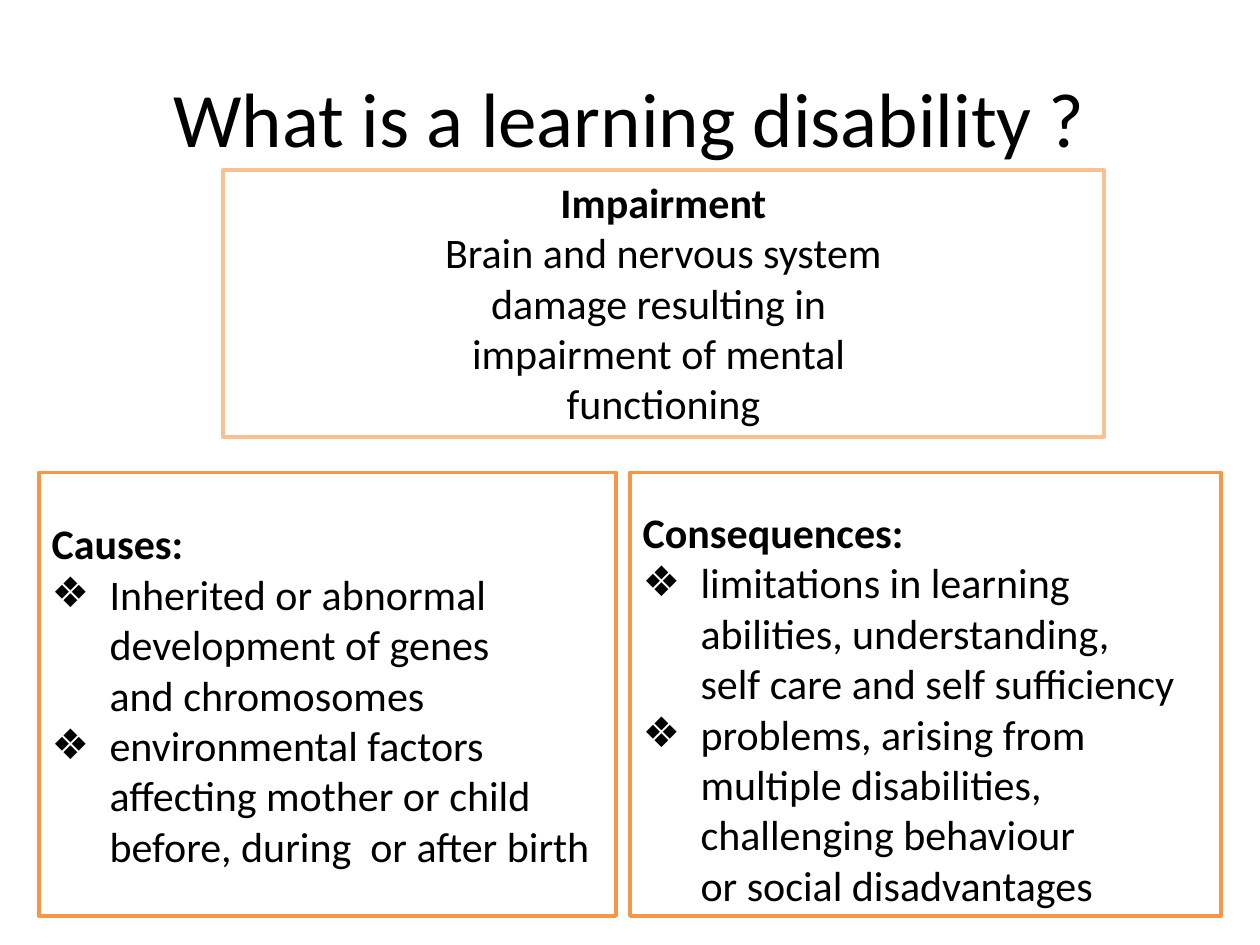
import dataclasses

import lxml.etree
import pptx
import pptx.dml.color
import pptx.enum.shapes
import pptx.enum.text
import pptx.oxml.ns
import pptx.util

ANCHOR = pptx.enum.text.MSO_ANCHOR
ALIGN = pptx.enum.text.PP_ALIGN
SLIDE_W, SLIDE_H = 10, 7.5


@dataclasses.dataclass(frozen=True)
class Theme:
    font: str = "Calibri"
    text: str = "000000"
    paper: str = "FFFFFF"
    soft_line: str = "FAC090"
    strong_line: str = "F79646"
    title_size: int = 44
    body_size: int = 24
    line_width: int = 2
    bullet: str = "❖"
    hang: float = 0.46


THEME = Theme()

# Boxes are left, top, width and height in inches.
MARGIN, LIST_TOP, LIST_H = 0.31, 3.75, 3.52
TITLE_BOX = (0.5, 0.3, SLIDE_W - 2 * 0.5, 1.25)
IMPAIRMENT_BOX = (1.77, 1.35, 6.99, 2.12)
CAUSES_BOX = (MARGIN, LIST_TOP, 4.58, LIST_H)
CONSEQUENCES_BOX = (SLIDE_W / 2, LIST_TOP, SLIDE_W / 2 - MARGIN, LIST_H)

IMPAIRMENT = [
    "Impairment",
    "Brain and nervous system",
    "damage resulting in ",
    "impairment of mental ",
    "functioning",
]
CAUSES = [
    "Causes:",
    "Inherited or abnormal\vdevelopment of genes\vand chromosomes",
    "environmental factors\vaffecting mother or child\v"
    "before, during  or after birth",
]
CONSEQUENCES = [
    "Consequences:",
    "limitations in learning\vabilities, understanding,\v"
    "self care and self sufficiency",
    "problems, arising from\vmultiple disabilities,\v"
    "challenging behaviour\vor social disadvantages",
]


def rgb(value):
    return pptx.dml.color.RGBColor.from_string(value)


def place(s, box):
    s.left, s.top, s.width, s.height = map(pptx.util.Inches, box)


def style_frame(s, line_color):
    s.fill.solid()
    s.fill.fore_color.rgb = rgb(THEME.paper)
    s.line.color.rgb = rgb(line_color)
    s.line.width = pptx.util.Pt(THEME.line_width)


def style_runs(p, size, bold=False):
    for r in p.runs:
        r.font.name = THEME.font
        r.font.size = pptx.util.Pt(size)
        r.font.bold = bold
        r.font.color.rgb = rgb(THEME.text)


def set_bullet(p, char=None):
    """Give the paragraph a hanging bullet, or none."""
    hang = pptx.util.Inches(THEME.hang) if char else 0
    pPr = p._p.get_or_add_pPr()
    pPr.set("marL", str(hang))
    pPr.set("indent", str(-hang))
    tag = "a:buChar" if char else "a:buNone"
    bullet = lxml.etree.SubElement(pPr, pptx.oxml.ns.qn(tag))
    if char:
        bullet.set("char", char)


def write_lines(tf, lines, align):
    """Write a bold heading followed by plain lines."""
    tf.word_wrap = True
    tf.auto_size = pptx.enum.text.MSO_AUTO_SIZE.NONE
    tf.text = "\n".join(lines)
    for i, p in enumerate(tf.paragraphs):
        p.alignment = align
        p.space_before = pptx.util.Pt(0)
        style_runs(p, THEME.body_size, bold=i == 0)


def fill_title(s, box, text):
    place(s, box)
    tf = s.text_frame
    tf.text = text
    tf.vertical_anchor = ANCHOR.MIDDLE
    tf.paragraphs[0].alignment = ALIGN.CENTER
    style_runs(tf.paragraphs[0], THEME.title_size)


def add_definition(slide, box, lines):
    s = slide.shapes.add_shape(
        pptx.enum.shapes.MSO_SHAPE.RECTANGLE, *map(pptx.util.Inches, box)
    )
    s.shadow.inherit = False
    style_frame(s, THEME.soft_line)
    s.text_frame.vertical_anchor = ANCHOR.TOP
    write_lines(s.text_frame, lines, ALIGN.CENTER)


def fill_list(s, box, lines, anchor):
    place(s, box)
    style_frame(s, THEME.strong_line)
    tf = s.text_frame
    write_lines(tf, lines, ALIGN.LEFT)
    tf.vertical_anchor = anchor
    set_bullet(tf.paragraphs[0])
    for p in tf.paragraphs[1:]:
        set_bullet(p, THEME.bullet)


def main():
    prs = pptx.Presentation()
    prs.slide_width = pptx.util.Inches(SLIDE_W)
    prs.slide_height = pptx.util.Inches(SLIDE_H)
    slide = prs.slides.add_slide(prs.slide_layouts.get_by_name("Two Content"))
    title, causes, consequences = slide.placeholders
    fill_title(title, TITLE_BOX, "What is a learning disability ?")
    add_definition(slide, IMPAIRMENT_BOX, IMPAIRMENT)
    fill_list(causes, CAUSES_BOX, CAUSES, ANCHOR.MIDDLE)
    fill_list(consequences, CONSEQUENCES_BOX, CONSEQUENCES, ANCHOR.BOTTOM)
    prs.save("out.pptx")


if __name__ == "__main__":
    main()
